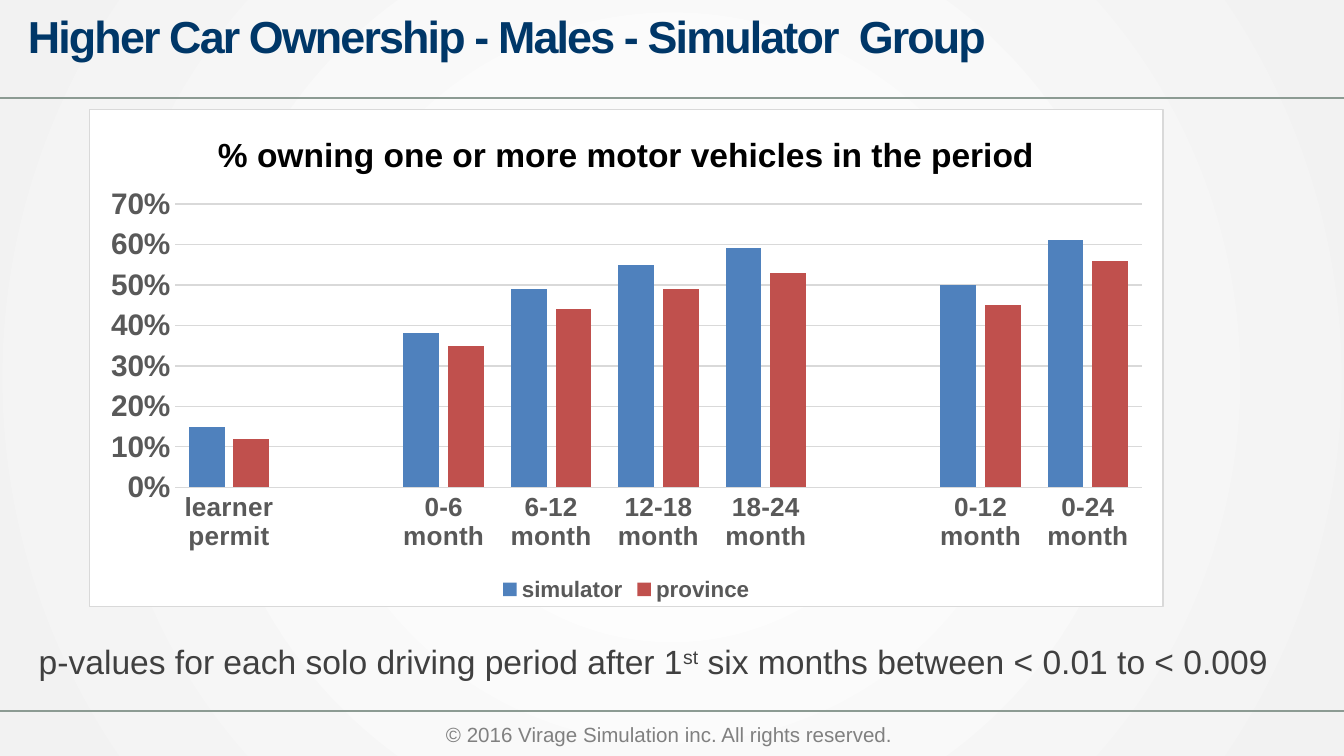
import pptx
import pptx.util
import pptx.chart.data
import pptx.dml.color
import pptx.enum.chart
import pptx.enum.shapes
import pptx.enum.text
import pptx.oxml
import pptx.oxml.ns

Inches, Pt = pptx.util.Inches, pptx.util.Pt
qn = pptx.oxml.ns.qn
NS = pptx.oxml.ns.nsdecls("a", "c")

SLIDE_WIDTH = 10
SLIDE_HEIGHT = SLIDE_WIDTH * 9 / 16
COLORS = {
    "navy": "003768", "text": "404040", "footer": "808080", "rule": "8C9B93",
    "axis": "595959", "grid": "D9D9D9", "black": "000000", "white": "FFFFFF",
    "edge": "F2F2F2", "blue": "4F81BD", "red": "C0504D",
}
RULES_Y = [0.73, 5.29]
TEXTS = [
    {"box": (3.22, 5.32, 3.56, 0.29), "size": 11, "color": "footer",
     "runs": [("© 2016 Virage Simulation inc. All rights reserved.", {})]},
    {"box": (0.11, 0, 7.93, 0.53), "size": 24, "color": "navy", "bold": True, "wrap": True,
     "runs": [("Higher Car Ownership - Males - Simulator  Group", {"spc": "-100"})]},
    {"box": (0.19, 4.72, 9.37, 0.4), "size": 18, "color": "text",
     "runs": [("p-values for each solo driving period after 1", {}),
              ("st", {"baseline": "30000"}),
              (" six months between < 0.01 to < 0.009", {})]},
]
CHART_BOX = (0.66, 0.81, 8, 3.71)
PLOT_LAYOUT = {"x": 0.08, "y": 0.19, "w": 0.9, "h": 0.57}
CHART_TITLE = "% owning one or more motor vehicles in the period"
CATEGORIES = ["learner permit", "", "0-6 month", "6-12 month", "12-18 month",
              "18-24 month", "", "0-12 month", "0-24 month"]
SERIES = [
    ("simulator", "blue", [0.15, None, 0.38, 0.49, 0.55, 0.59, None, 0.5, 0.61]),
    ("province", "red", [0.12, None, 0.35, 0.44, 0.49, 0.53, None, 0.45, 0.56]),
]


def rgb(name):
    return pptx.dml.color.RGBColor.from_string(COLORS[name])


def set_font(font, size, color, bold=False, name="Arial"):
    font.name, font.size, font.bold = name, Pt(size), bold
    font.color.rgb = rgb(color)


def set_line(line, color):
    line.color.rgb = rgb(color)
    line.width = Pt(0.75)


def add_background(s):
    s.background.fill.solid()
    solid = s.element.find(".//" + qn("p:bgPr")).find(qn("a:solidFill"))
    grad = pptx.oxml.parse_xml(
        f'<a:gradFill {NS} rotWithShape="1"><a:gsLst>'
        f'<a:gs pos="8000"><a:srgbClr val="{COLORS["white"]}"/></a:gs>'
        f'<a:gs pos="100000"><a:srgbClr val="{COLORS["edge"]}"/></a:gs></a:gsLst>'
        '<a:path path="circle"><a:fillToRect l="50000" t="50000" r="50000" b="50000"/></a:path>'
        '</a:gradFill>')
    solid.getparent().replace(solid, grad)


def add_rule(s, y):
    line = s.shapes.add_connector(pptx.enum.shapes.MSO_CONNECTOR.STRAIGHT,
                                  Inches(SLIDE_WIDTH), Inches(y), 0, Inches(y))
    set_line(line.line, "rule")
    line.element.spPr.append(pptx.oxml.parse_xml(f"<a:effectLst {NS}/>"))


def add_text(s, item):
    tf = s.shapes.add_textbox(*map(Inches, item["box"])).text_frame
    tf.word_wrap = item.get("wrap", False)
    tf.vertical_anchor = pptx.enum.text.MSO_ANCHOR.MIDDLE
    p = tf.paragraphs[0]
    for text, attrs in item["runs"]:
        r = p.add_run()
        r.text = text
        set_font(r.font, item["size"], item["color"], item.get("bold", False))
        for key, value in attrs.items():
            r.font._element.set(key, value)


def set_plot_layout(chart):
    area = chart.element.find(".//" + qn("c:plotArea"))
    for layout in area.findall(qn("c:layout")):
        area.remove(layout)
    modes = "".join(f'<c:{k}Mode val="edge"/>' for k in "xy")
    sizes = "".join(f'<c:{k} val="{v}"/>' for k, v in PLOT_LAYOUT.items())
    area.insert(0, pptx.oxml.parse_xml(
        f'<c:layout {NS}><c:manualLayout><c:layoutTarget val="inner"/>'
        f'{modes}{sizes}</c:manualLayout></c:layout>'))


def add_ownership_chart(s):
    enum = pptx.enum.chart
    data = pptx.chart.data.CategoryChartData(number_format="0%")
    data.categories = CATEGORIES
    for name, _, values in SERIES:
        data.add_series(name, values)
    chart = s.shapes.add_chart(enum.XL_CHART_TYPE.COLUMN_CLUSTERED,
                               *map(Inches, CHART_BOX), data).chart
    set_font(chart.font, 10, "black", name="Calibri")
    chart.element.find(qn("c:chart")).addnext(pptx.oxml.parse_xml(
        f'<c:spPr {NS}><a:solidFill><a:srgbClr val="{COLORS["white"]}"/></a:solidFill>'
        f'<a:ln w="9525"><a:solidFill><a:srgbClr val="{COLORS["grid"]}"/></a:solidFill></a:ln>'
        '</c:spPr>'))
    set_plot_layout(chart)

    p = chart.chart_title.text_frame.paragraphs[0]
    r = p.add_run()
    r.text = CHART_TITLE
    for font in (p.font, r.font):
        set_font(font, 18, "black", True)
    chart.chart_title.include_in_layout = False

    chart.has_legend = True
    chart.legend.position = enum.XL_LEGEND_POSITION.BOTTOM
    chart.legend.include_in_layout = False
    set_font(chart.legend.font, 12, "axis", True)

    for axis, size in ((chart.category_axis, 14), (chart.value_axis, 16)):
        axis.major_tick_mark = axis.minor_tick_mark = enum.XL_TICK_MARK.NONE
        set_font(axis.tick_labels.font, size, "axis", True)
    set_line(chart.category_axis.format.line, "grid")
    values = chart.value_axis
    values.minimum_scale, values.maximum_scale, values.major_unit = 0, 0.7, 0.1
    values.tick_labels.number_format = "0%"
    values.tick_labels.number_format_is_linked = False
    values.format.line.fill.background()
    set_line(values.major_gridlines.format.line, "grid")

    plot = chart.plots[0]
    plot.gap_width, plot.overlap, plot.vary_by_categories = 75, -25, False
    for series, (_, color, _) in zip(plot.series, SERIES):
        series.format.fill.solid()
        series.format.fill.fore_color.rgb = rgb(color)
        series.invert_if_negative = False


def main():
    prs = pptx.Presentation()
    prs.slide_width, prs.slide_height = Inches(SLIDE_WIDTH), Inches(SLIDE_HEIGHT)
    s = prs.slides.add_slide(prs.slide_layouts[6])
    add_background(s)
    for y in RULES_Y:
        add_rule(s, y)
    for item in TEXTS:
        add_text(s, item)
    add_ownership_chart(s)
    prs.save("out.pptx")


if __name__ == "__main__":
    main()
